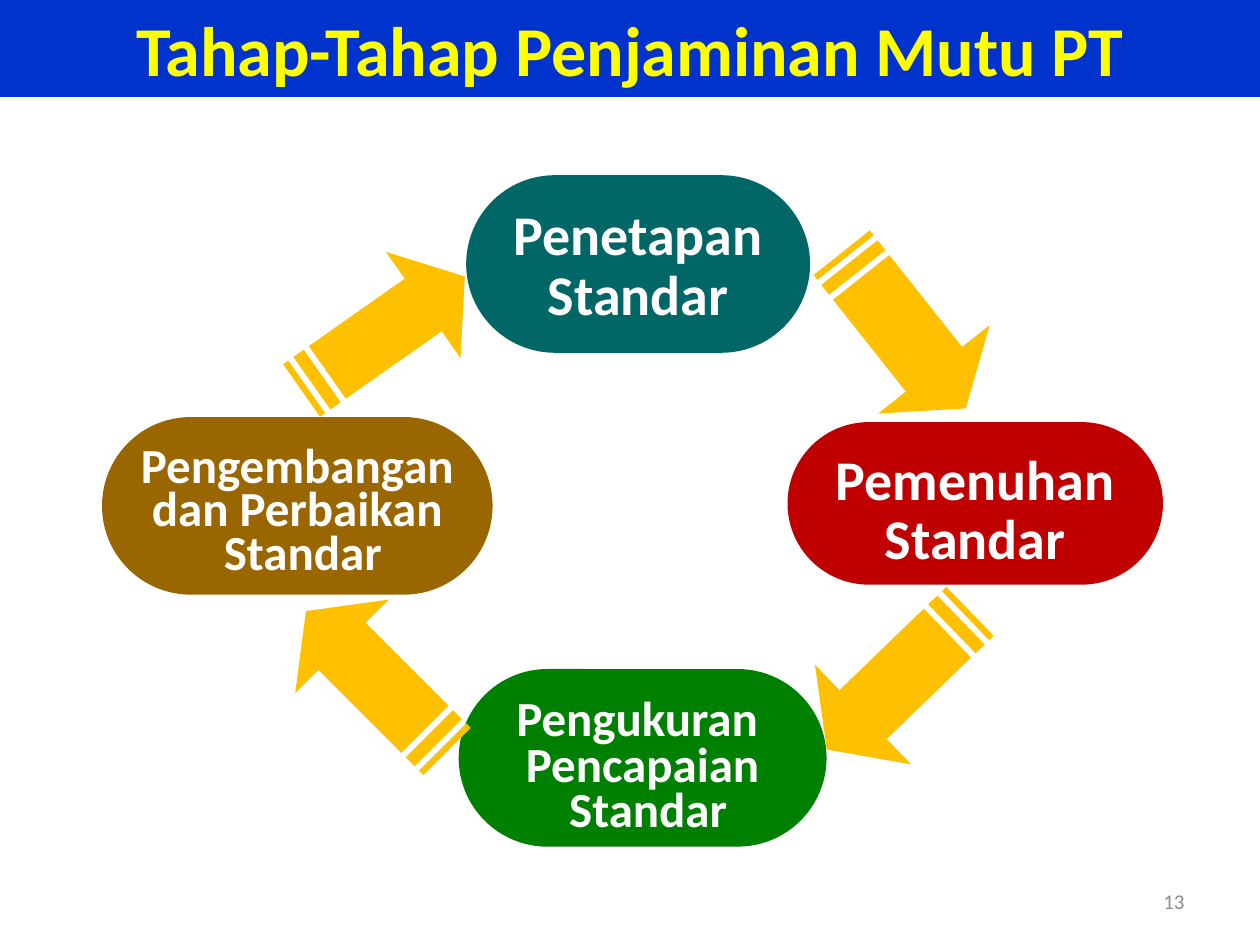
from dataclasses import dataclass
from typing import Optional

from pptx import Presentation
from pptx.dml.color import RGBColor
from pptx.enum.shapes import MSO_SHAPE
from pptx.enum.text import MSO_ANCHOR, MSO_AUTO_SIZE, PP_ALIGN
from pptx.shapes.autoshape import Shape
from pptx.slide import Slide
from pptx.util import Emu, Pt

PILL = MSO_SHAPE.ROUNDED_RECTANGLE
RECT = MSO_SHAPE.RECTANGLE
TOP, MIDDLE = MSO_ANCHOR.TOP, MSO_ANCHOR.MIDDLE
GROW = MSO_AUTO_SIZE.SHAPE_TO_FIT_TEXT
CENTER, RIGHT = PP_ALIGN.CENTER, PP_ALIGN.RIGHT

SCALE = 9144


@dataclass(frozen=True)
class Theme:
    font: str = "Calibri"
    white: str = "FFFFFF"
    teal: str = "006666"
    green: str = "008000"
    red: str = "C00000"
    brown: str = "996600"
    gold: str = "FFC000"
    blue: str = "0033CC"
    yellow: str = "FFFF00"
    gray: str = "8C8C8C"
    title: int = 40
    large: int = 32
    medium: int = 28
    small: int = 12


@dataclass(frozen=True)
class Box:
    left: int
    top: int
    width: int
    height: int


@dataclass(frozen=True)
class Stage:
    box: Box
    fill: str
    lines: tuple[str, ...]
    size: int
    pitch: int


@dataclass(frozen=True)
class Arrow:
    box: Box
    angle: float


THEME = Theme()

STAGES = (
    Stage(Box(370, 139, 273, 141), THEME.teal,
          ("Penetapan", "Standar"), THEME.large, 34),
    Stage(Box(364, 531, 292, 141), THEME.green,
          ("Pengukuran ", "Pencapaian", " Standar"), THEME.medium, 26),
    Stage(Box(625, 335, 298, 129), THEME.red,
          ("Pemenuhan", "Standar"), THEME.large, 34),
    Stage(Box(81, 331, 310, 141), THEME.brown,
          ("Pengembangan ", "dan Perbaikan", " Standar"), THEME.medium, 25),
)

ARROWS = (
    Arrow(Box(225, 213, 158, 103), 324.9),
    Arrow(Box(638, 206, 158, 113), 51.6),
    Arrow(Box(634, 485, 158, 110), 136),
    Arrow(Box(220, 488, 158, 105), 225),
)


def px(count: int) -> Emu:
    return Emu(count * SCALE)


def place(box: Box) -> tuple[Emu, ...]:
    return px(box.left), px(box.top), px(box.width), px(box.height)


def paint(shape: Shape, color: str) -> None:
    shape.shadow.inherit = False
    shape.fill.solid()
    shape.fill.fore_color.rgb = RGBColor.from_string(color)
    shape.line.fill.background()


def write(shape: Shape, lines: tuple[str, ...], size: int, color: str,
          bold: bool = True, align: PP_ALIGN = CENTER,
          anchor: MSO_ANCHOR = TOP, pitch: Optional[int] = None) -> None:
    frame = shape.text_frame
    frame.word_wrap = True
    frame.vertical_anchor = anchor
    for index, line in enumerate(lines):
        para = frame.add_paragraph() if index else frame.paragraphs[0]
        para.alignment = align
        if pitch:
            para.line_spacing = Pt(pitch)
        run = para.add_run()
        run.text = line
        run.font.name = THEME.font
        run.font.size = Pt(size)
        run.font.bold = bold
        run.font.color.rgb = RGBColor.from_string(color)


def draw_stage(slide: Slide, stage: Stage) -> None:
    shape = slide.shapes.add_shape(PILL, *place(stage.box))
    shape.adjustments[0] = 0.5
    paint(shape, stage.fill)
    write(shape, stage.lines, stage.size, THEME.white, pitch=stage.pitch)


def draw_arrow(slide: Slide, arrow: Arrow) -> None:
    wide, high = arrow.box.width, arrow.box.height
    unit = wide / 32
    upper, lower, neck = high / 4, high * 3 / 4, wide * 3 / 4
    pen = slide.shapes.build_freeform(neck, 0, SCALE)
    pen.add_line_segments([
        (neck, upper), (5 * unit, upper), (5 * unit, lower),
        (neck, lower), (neck, high), (wide, high / 2),
    ])
    for start, end in ((2, 4), (0, 1)):
        pen.move_to(start * unit, upper)
        pen.add_line_segments([
            (start * unit, lower), (end * unit, lower), (end * unit, upper),
        ])
    shape = pen.convert_to_shape(px(arrow.box.left), px(arrow.box.top))
    shape.rotation = arrow.angle
    paint(shape, THEME.gold)


def draw_title(slide: Slide) -> None:
    shape = slide.shapes.add_shape(RECT, *place(Box(0, 0, 1000, 77)))
    paint(shape, THEME.blue)
    write(shape, ("Tahap-Tahap Penjaminan Mutu PT",), THEME.title, THEME.yellow)
    shape.text_frame.auto_size = GROW


def draw_page(slide: Slide) -> None:
    shape = slide.shapes.add_textbox(*place(Box(717, 695, 233, 40)))
    write(shape, ("13",), THEME.small, THEME.gray, False, RIGHT, MIDDLE)


def main() -> None:
    deck = Presentation()
    deck.slide_width, deck.slide_height = px(1000), px(750)
    slide = deck.slides.add_slide(deck.slide_layouts[6])
    draw_page(slide)
    for stage in STAGES:
        draw_stage(slide, stage)
    for arrow in ARROWS:
        draw_arrow(slide, arrow)
    draw_title(slide)
    deck.save("out.pptx")


if __name__ == "__main__":
    main()
